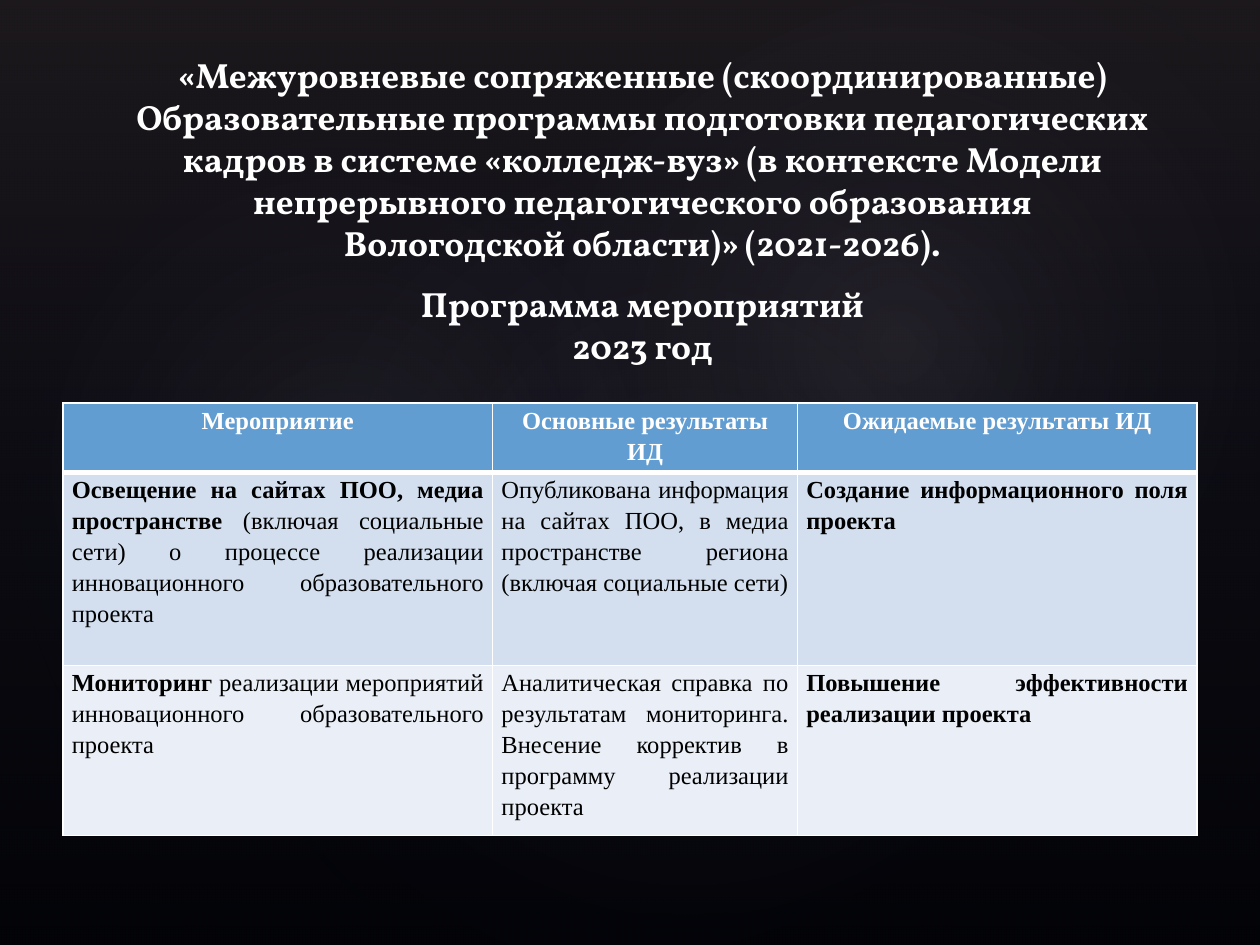
import pptx
import pptx.util
import pptx.dml.color
import pptx.enum.shapes
import pptx.enum.text
import pptx.oxml
import pptx.oxml.ns
from pptx.util import Inches

ALIGN = pptx.enum.text.PP_ALIGN
NS = pptx.oxml.ns.nsdecls("a")


def color(hex_value):
    return pptx.dml.color.RGBColor.from_string(hex_value)


def add_glow(kind, box, rotation, stops, direction):
    """Add a backdrop shape with a gradient of (position %, colour, opacity %) stops."""
    glow = slide.shapes.add_shape(kind, *map(Inches, box))
    glow.rotation = rotation
    glow.shadow.inherit = False
    glow.line.fill.background()
    glow.fill.background()
    stop_xml = "".join(
        f'<a:gs pos="{pos * 1000}"><a:srgbClr val="{hex_value}">'
        f'<a:alpha val="{opacity * 1000}"/></a:srgbClr></a:gs>'
        for pos, hex_value, opacity in stops)
    gradient = pptx.oxml.parse_xml(
        f'<a:gradFill {NS} rotWithShape="1"><a:gsLst>{stop_xml}</a:gsLst>{direction}</a:gradFill>')
    properties = glow.element.spPr
    properties.replace(properties.find(pptx.oxml.ns.qn("a:noFill")), gradient)


prs = pptx.Presentation()
prs.slide_width, prs.slide_height = Inches(10), Inches(7.5)
slide = prs.slides.add_slide(prs.slide_layouts[6])

# Dark backdrop with soft glows
slide.background.fill.solid()
slide.background.fill.fore_color.rgb = color("000000")
SHAPE = pptx.enum.shapes.MSO_SHAPE
add_glow(SHAPE.RECTANGLE, (0, 0, 10, 7.5), 0,
         [(0, "504652", 36), (100, "242852", 10)], '<a:lin ang="5400000" scaled="0"/>')
radial = ('<a:path path="circle">'
          '<a:fillToRect l="50000" t="50000" r="50000" b="50000"/></a:path>')
for box, rotation, opacity in [
    ((1.5, 1.14, 7.92, 6.24), 328.7, 7),
    ((-0.3, 1.28, 6.06, 4.9), 294.3, 8),
    ((3.58, 0.13, 7.09, 5.2), 328.7, 8),
]:
    add_glow(SHAPE.OVAL, box, rotation,
             [(0, "C4BCC6", opacity), (58, "242852", 0)], radial)

# Programme table: each cell is a list of (text, bold) runs
rows = [
    [[("Мероприятие", True)],
     [("Основные результаты ИД", True)],
     [("Ожидаемые результаты ИД", True)]],
    [[("Освещение на сайтах ПОО, медиа пространстве", True),
      (" (включая социальные сети) о процессе реализации инновационного "
       "образовательного проекта", False)],
     [("Опубликована информация на сайтах ПОО, в медиа пространстве региона "
       "(включая социальные сети)", False)],
     [("Создание информационного поля проекта", True)]],
    [[("Мониторинг", True),
      (" реализации мероприятий инновационного образовательного проекта", False)],
     [("Аналитическая справка по результатам мониторинга. Внесение корректив "
       "в программу реализации проекта", False)],
     [("Повышение эффективности реализации проекта", True)]],
]
row_fills = ["629DD1", "D3DFEE", "EAEFF7"]
programme = slide.shapes.add_table(
    3, 3, Inches(0.5), Inches(3.2), Inches(9), Inches(3.43)).table
for column, width in zip(programme.columns, [3.41, 2.42, 3.17]):
    column.width = Inches(width)
for row, height in zip(programme.rows, [0.55, 1.53, 1.35]):
    row.height = Inches(height)

for r, row in enumerate(rows):
    for c, runs in enumerate(row):
        cell = programme.cell(r, c)
        cell.margin_left = cell.margin_right = Inches(0.07)
        cell.margin_top = cell.margin_bottom = 0
        cell.fill.solid()
        cell.fill.fore_color.rgb = color(row_fills[r])
        paragraph = cell.text_frame.paragraphs[0]
        paragraph.alignment = ALIGN.JUSTIFY if r else ALIGN.CENTER
        paragraph.line_spacing = 1.15
        for text, bold in runs:
            run = paragraph.add_run()
            run.text = text
            run.font.name = "Times New Roman"
            run.font.size = pptx.util.Pt(14)
            run.font.bold = bold
            run.font.color.rgb = color("000000" if r else "FFFFFF")
        # White borders, thicker between the header and the body
        for i, side in enumerate("LRTB"):
            thick = (r, side) in [(0, "B"), (1, "T")]
            cell._tc.get_or_add_tcPr().insert(i, pptx.oxml.parse_xml(
                f'<a:ln{side} {NS} w="{pptx.util.Pt(3 if thick else 1)}"><a:solidFill>'
                f'<a:srgbClr val="FFFFFF"/></a:solidFill></a:ln{side}>'))

# Title
title = slide.shapes.add_textbox(
    Inches(0.7), Inches(0.3), Inches(8.8), Inches(2.66)).text_frame
title.word_wrap = True
title.vertical_anchor = pptx.enum.text.MSO_ANCHOR.BOTTOM
title_parts = [
    ["«Межуровневые сопряженные (скоординированные) Образовательные программы "
     "подготовки педагогических кадров в системе «колледж-вуз» (в контексте Модели "
     "непрерывного педагогического образования",
     "Вологодской области)» (2021-2026)."],
    ["Программа мероприятий", "2023 год"],
]
for i, lines in enumerate(title_parts):
    paragraph = title.add_paragraph() if i else title.paragraphs[0]
    paragraph.alignment = ALIGN.CENTER
    paragraph.space_before = pptx.util.Pt(11 * i)
    for j, line in enumerate(lines):
        if j:
            paragraph.add_line_break()
        run = paragraph.add_run()
        run.text = line
        run.font.name = "Vollkorn"
        run.font.size = pptx.util.Pt(20)
        run.font.bold = True
        run.font.color.rgb = color("FFFFFF")

prs.save("out.pptx")
